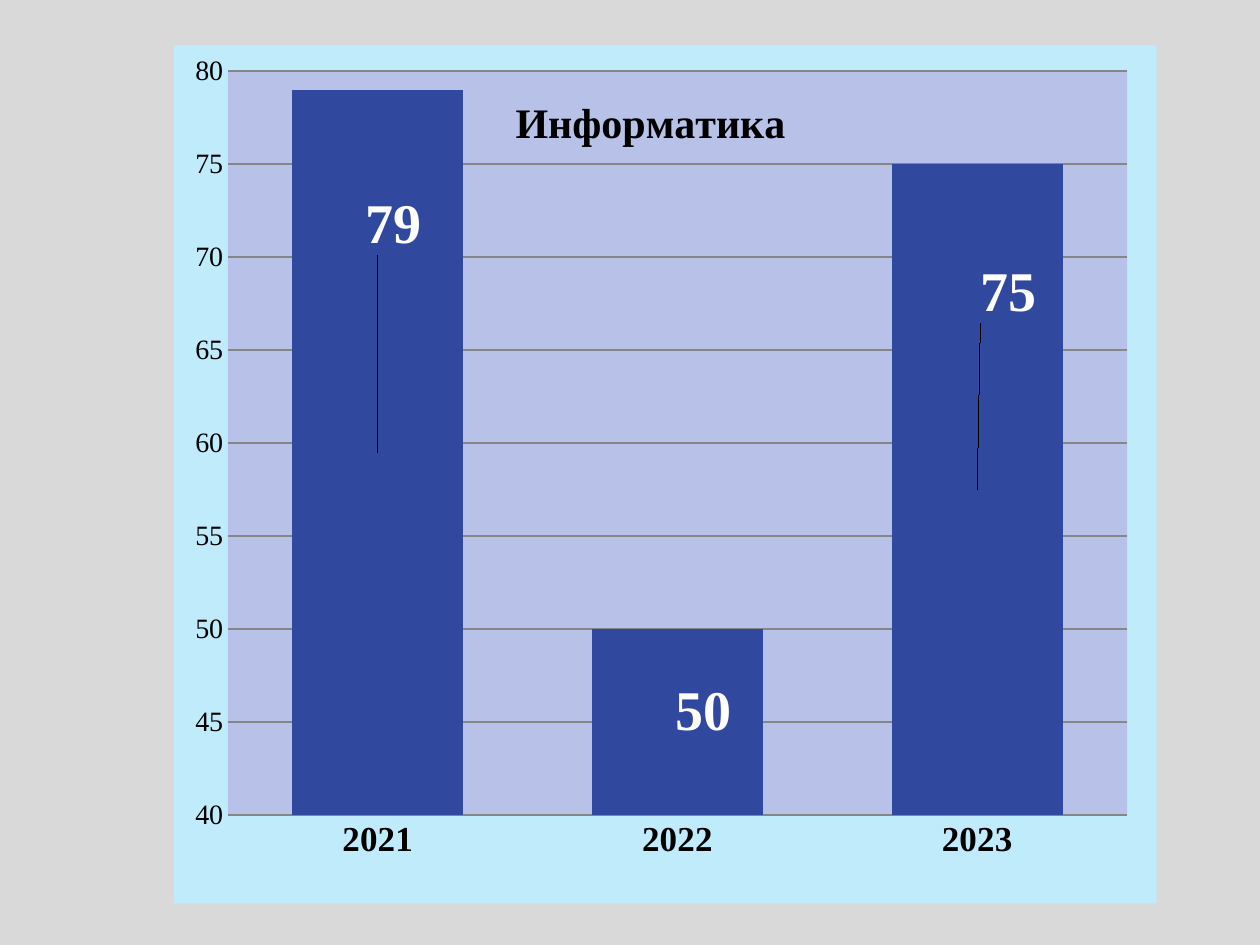
from lxml import etree
from pptx import Presentation
from pptx.chart.data import CategoryChartData
from pptx.dml.color import RGBColor
from pptx.enum.chart import XL_CHART_TYPE as ChartType, XL_TICK_MARK as TickMark
from pptx.oxml import parse_xml
from pptx.oxml.ns import nsdecls, qn
from pptx.util import Inches, Pt

FACE = "Times New Roman"
SUBJECT = "Информатика"
SCORES = {"2021": 79, "2022": 50, "2023": 75}
LABEL_SHIFTS = [(0.016, -0.265), (0.027, -0.012), (0.032, -0.23)]


def color(value):
    """Turn a hex string into a colour."""
    return RGBColor.from_string(value)


def style_font(font, size, bold=False, ink="000000"):
    """Set face, size, weight and colour of a font."""
    font.name = FACE
    font.size = Pt(size)
    font.bold = bold
    font.color.rgb = color(ink)


def area_fill(value):
    """Make the properties of a borderless filled chart area."""
    return parse_xml(
        f'<c:spPr {nsdecls("c", "a")}><a:solidFill><a:srgbClr val="{value}"/></a:solidFill>'
        "<a:ln><a:noFill/></a:ln></c:spPr>"
    )


def set_layout(element, index, **settings):
    """Place a chart part by hand, as fractions of the chart."""
    for old in element.findall(qn("c:layout")):
        element.remove(old)
    layout = etree.Element(qn("c:layout"))
    manual = etree.SubElement(layout, qn("c:manualLayout"))
    for name, value in settings.items():
        etree.SubElement(manual, qn(f"c:{name}")).set("val", str(value))
    element.insert(index, layout)


def add_score_chart(slide):
    """Add the column chart of yearly scores."""
    data = CategoryChartData()
    data.categories = list(SCORES)
    data.add_series(SUBJECT, list(SCORES.values()))
    frame = slide.shapes.add_chart(
        ChartType.COLUMN_STACKED, Inches(1.38), Inches(0.36), Inches(7.8), Inches(6.81), data
    )
    chart = frame.chart
    chart.has_legend = False
    style_font(chart.font, 10)
    return chart


def style_areas(chart):
    """Fill the chart and plot areas and place the plot."""
    body = chart.element.find(qn("c:chart"))
    body.addnext(area_fill("BFEBFA"))
    plot_area = body.find(qn("c:plotArea"))
    plot_area.append(area_fill("B8C2E9"))
    set_layout(plot_area, 0, layoutTarget="inner", xMode="edge", yMode="edge",
               x=0.055, y=0.03, w=0.915, h=0.867)


def style_title(chart):
    """Write the title over the plot."""
    chart.has_title = True
    title = chart.chart_title
    span = title.text_frame.paragraphs[0].add_run()
    span.text = SUBJECT
    style_font(span.font, 24, True)
    set_layout(title.element if hasattr(title, "element") else title._element, 1,
               xMode="edge", yMode="edge", x=0.34, y=0.05)


def style_axes(chart):
    """Set the scale, gridlines and fonts of both axes."""
    years, scores = chart.category_axis, chart.value_axis
    for axis, size, bold in ((years, 20, True), (scores, 16, False)):
        axis.major_tick_mark = axis.minor_tick_mark = TickMark.NONE
        style_font(axis.tick_labels.font, size, bold)
    scores.minimum_scale, scores.maximum_scale, scores.major_unit = 40, 80, 5
    scores.has_major_gridlines = True
    scores.format.line.fill.background()
    for line in (scores.major_gridlines.format.line, years.format.line):
        line.color.rgb = color("868686")
        line.width = Pt(1)


def style_columns(chart):
    """Colour the columns and shift their value labels."""
    plot = chart.plots[0]
    plot.gap_width, plot.overlap, plot.vary_by_categories = 75, 100, False
    series = plot.series[0]
    series.format.fill.solid()
    series.format.fill.fore_color.rgb = color("31489F")
    for index in range(len(SCORES)):
        style_font(series.points[index].data_label.font, 32, True, "FFFFFF")
    for label, (x, y) in zip(chart.element.iter(qn("c:dLbl")), LABEL_SHIFTS):
        set_layout(label, 1, x=x, y=y)


def main():
    """Build and save the deck."""
    deck = Presentation()
    deck.slide_width, deck.slide_height = Inches(10), Inches(7.5)
    slide = deck.slides.add_slide(deck.slide_layouts[6])
    slide.background.fill.solid()
    slide.background.fill.fore_color.rgb = color("D9D9D9")
    chart = add_score_chart(slide)
    for style in (style_areas, style_title, style_axes, style_columns):
        style(chart)
    deck.save("out.pptx")


if __name__ == "__main__":
    main()
